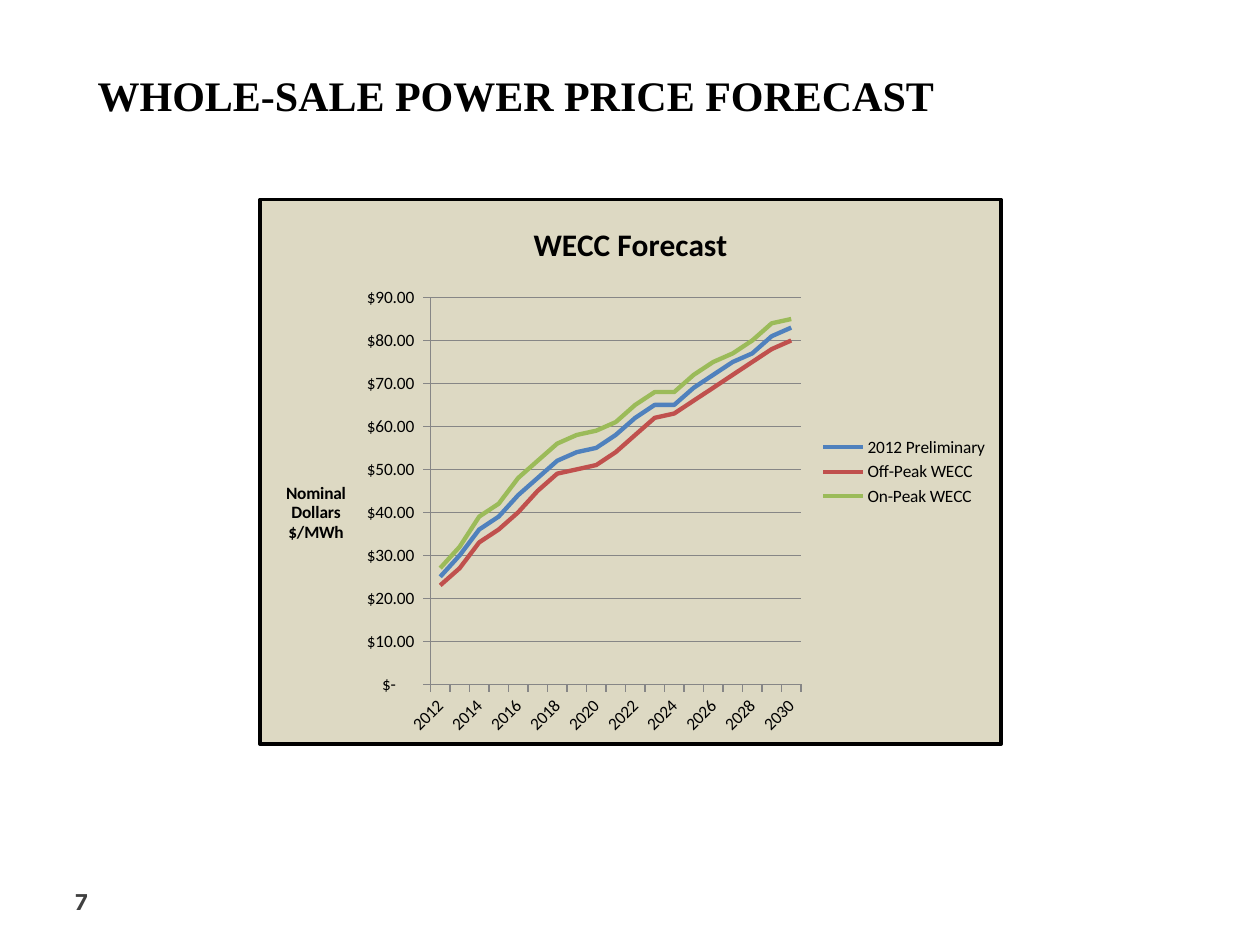
from lxml.etree import SubElement
from pptx import Presentation
from pptx.chart.data import CategoryChartData
from pptx.dml.color import RGBColor
from pptx.enum.chart import XL_CHART_TYPE, XL_LEGEND_POSITION, XL_TICK_MARK
from pptx.enum.text import MSO_ANCHOR, PP_ALIGN
from pptx.oxml import parse_xml
from pptx.oxml.ns import nsdecls, qn
from pptx.util import Inches, Pt

YEARS = range(2012, 2031)
FORECASTS = [
    ("2012 Preliminary", "4F81BD",
     [25, 30, 36, 39, 44, 48, 52, 54, 55, 58, 62, 65, 65, 69, 72, 75, 77, 81, 83]),
    ("Off-Peak WECC", "C0504D",
     [23, 27, 33, 36, 40, 45, 49, 50, 51, 54, 58, 62, 63, 66, 69, 72, 75, 78, 80]),
    ("On-Peak WECC", "9BBB59",
     [27, 32, 39, 42, 48, 52, 56, 58, 59, 61, 65, 68, 68, 72, 75, 77, 80, 84, 85]),
]
DOLLARS = r'_("$"* #,##0.00_);_("$"* \(#,##0.00\);_("$"* "-"??_);_(@_)'
GRAY = "868686"


def write(tf, text, font="Calibri", size=10, color="000000", align=None):
    """Fill a text frame with bold text, one paragraph per line."""
    tf.text = text
    for p in tf.paragraphs:
        p.alignment = align
        f = p.runs[0].font
        f.name, f.size, f.bold = font, Pt(size), True
        f.color.rgb = RGBColor.from_string(color)


def place(element, index, **shares):
    """Set a manual layout, in shares of the chart's size."""
    for old in element.findall(qn("c:layout")):
        element.remove(old)
    layout = parse_xml(f"<c:layout {nsdecls('c')}/>")
    manual = SubElement(layout, qn("c:manualLayout"))
    if "w" in shares:
        SubElement(manual, qn("c:layoutTarget")).set("val", "inner")
    for mode in ("xMode", "yMode"):
        SubElement(manual, qn(f"c:{mode}")).set("val", "edge")
    for name, share in shares.items():
        SubElement(manual, qn(f"c:{name}")).set("val", str(share))
    element.insert(index, layout)


prs = Presentation()
prs.slide_width, prs.slide_height = Inches(10), Inches(7.5)
s = prs.slides.add_slide(prs.slide_layouts[6])

# Slide number
number = s.shapes.add_textbox(Inches(0.5), Inches(6.95), Inches(2.33), Inches(0.4))
number.text_frame.vertical_anchor = MSO_ANCHOR.MIDDLE
write(number.text_frame, "7", font="Karla", size=14, color="404040")

# Chart
data = CategoryChartData()
data.categories = [str(year) for year in YEARS]
for name, color, prices in FORECASTS:
    data.add_series(name, prices)
chart = s.shapes.add_chart(XL_CHART_TYPE.LINE, Inches(2.05), Inches(1.57),
                           Inches(5.91), Inches(4.35), data).chart
chart.font.name, chart.font.size = "Calibri", Pt(10)
chart.font.color.rgb = RGBColor.from_string("000000")
write(chart.chart_title.text_frame, "WECC Forecast", size=18)
chart.chart_title.include_in_layout = False
chart.has_legend = True
chart.legend.position = XL_LEGEND_POSITION.RIGHT
chart.legend.include_in_layout = False

for series, (name, color, prices) in zip(chart.plots[0].series, FORECASTS):
    series.smooth = False
    series.format.line.width = Pt(2.5)
    series.format.line.color.rgb = RGBColor.from_string(color)

# Axes
years, dollars = chart.category_axis, chart.value_axis
dollars.minimum_scale, dollars.maximum_scale, dollars.major_unit = 0, 90, 10
dollars.tick_labels.number_format = DOLLARS
dollars.tick_labels.number_format_is_linked = False
dollars.has_major_gridlines = True
for axis in (years, dollars):
    axis.major_tick_mark = XL_TICK_MARK.OUTSIDE
    axis.tick_labels.font.size = Pt(10)
for line in (years.format.line, dollars.format.line, dollars.major_gridlines.format.line):
    line.width = Pt(0.75)
    line.color.rgb = RGBColor.from_string(GRAY)
years._element.find(qn("c:txPr")).find(qn("a:bodyPr")).set("rot", "-2700000")

write(dollars.axis_title.text_frame, "Nominal\nDollars\n$/MWh", align=PP_ALIGN.CENTER)
axis_title = dollars.axis_title._element
body = axis_title.find(".//" + qn("a:bodyPr"))
body.set("rot", "0")
body.set("vert", "horz")
place(axis_title, 1, x=0.03, y=0.51)

# Chart area: plot position, fill and border
chart_xml = chart._chartSpace.find(qn("c:chart"))
place(chart_xml.find(qn("c:plotArea")), 0, x=0.23, y=0.18, w=0.5, h=0.71)
chart_xml.addnext(parse_xml(
    f'<c:spPr {nsdecls("c", "a")}>'
    '<a:solidFill><a:srgbClr val="DDD9C3"/></a:solidFill>'
    f'<a:ln w="{Pt(2)}"><a:solidFill><a:srgbClr val="000000"/></a:solidFill></a:ln>'
    '</c:spPr>'))

# Slide title
title = s.shapes.add_textbox(Inches(0.64), Inches(0.5), Inches(6.91), Inches(0.5))
title.text_frame.word_wrap = False
write(title.text_frame, "WHOLE-SALE POWER PRICE FORECAST",
      font="Times New Roman", size=24, align=PP_ALIGN.CENTER)

prs.save("out.pptx")
